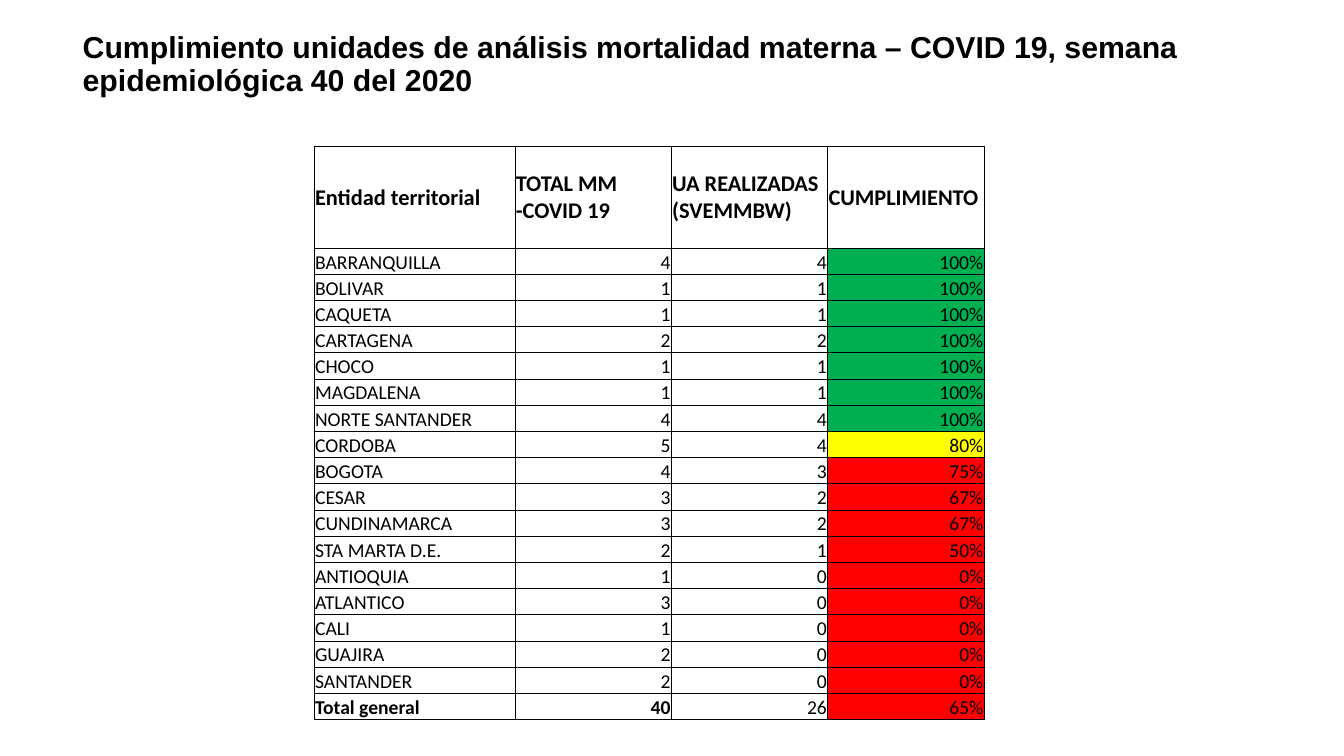
import lxml.etree
import pptx
import pptx.dml.color
import pptx.enum.text
import pptx.oxml.ns
import pptx.util

Cm, Pt = pptx.util.Cm, pptx.util.Pt
RGB = pptx.dml.color.RGBColor
ALIGN = pptx.enum.text.PP_ALIGN
ANCHOR = pptx.enum.text.MSO_ANCHOR

# Content
TITLE = ("Cumplimiento unidades de análisis mortalidad materna – COVID 19, "
         "semana epidemiológica 40 del 2020")
HEADERS = ["Entidad territorial", "TOTAL MM -COVID 19",
           "UA REALIZADAS (SVEMMBW)", "CUMPLIMIENTO"]
ENTITIES = [  # name, maternal deaths, analysis units held
    ("BARRANQUILLA", 4, 4),
    ("BOLIVAR", 1, 1),
    ("CAQUETA", 1, 1),
    ("CARTAGENA", 2, 2),
    ("CHOCO", 1, 1),
    ("MAGDALENA", 1, 1),
    ("NORTE SANTANDER", 4, 4),
    ("CORDOBA", 5, 4),
    ("BOGOTA", 4, 3),
    ("CESAR", 3, 2),
    ("CUNDINAMARCA", 3, 2),
    ("STA MARTA D.E.", 2, 1),
    ("ANTIOQUIA", 1, 0),
    ("ATLANTICO", 3, 0),
    ("CALI", 1, 0),
    ("GUAJIRA", 2, 0),
    ("SANTANDER", 2, 0),
]
TOTAL = ("Total general", sum(e[1] for e in ENTITIES), sum(e[2] for e in ENTITIES))
COLORS = {"text": "000000", "full": "00B050", "partial": "FFFF00", "low": "FF0000"}

# Layout
COL_WIDTHS = [Cm(5.06)] + [Cm(3.94)] * 3
HEADER_HEIGHT, ROW_HEIGHT = Cm(2.57), Cm(0.66)
MARGINS = {"margin_left": Cm(0.02), "margin_right": Cm(0.02),
           "margin_top": Cm(0.02), "margin_bottom": 0}


def format_font(font, **values):
    font.color.rgb = RGB.from_string(COLORS["text"])
    for name, value in values.items():
        setattr(font, name, value)


def add_borders(cell):
    tc_pr = cell._tc.get_or_add_tcPr()
    for side in ("a:lnL", "a:lnR", "a:lnT", "a:lnB"):
        line = lxml.etree.SubElement(tc_pr, pptx.oxml.ns.qn(side), w=str(Pt(0.5)))
        fill = lxml.etree.SubElement(line, pptx.oxml.ns.qn("a:solidFill"))
        lxml.etree.SubElement(fill, pptx.oxml.ns.qn("a:srgbClr"), val=COLORS["text"])


def fill_cell(cell, text, size, bold, anchor, align, color=None):
    add_borders(cell)
    if color:
        cell.fill.solid()
        cell.fill.fore_color.rgb = RGB.from_string(color)
    else:
        cell.fill.background()
    for name, value in MARGINS.items():
        setattr(cell, name, value)
    cell.vertical_anchor = anchor
    p = cell.text_frame.paragraphs[0]
    p.alignment = align
    r = p.add_run()
    r.text = text
    format_font(r.font, name="Calibri", size=Pt(size), bold=bold)


def compliance_color(rate):
    if rate >= 1:
        return COLORS["full"]
    return COLORS["partial"] if rate >= 0.8 else COLORS["low"]


def main():
    prs = pptx.Presentation()
    prs.slide_width, prs.slide_height = Cm(33.87), Cm(19.05)
    s = prs.slides.add_slide(prs.slide_layouts[5])

    # Title
    title = s.shapes.title
    title.left, title.top, title.width, title.height = Cm(1.83), Cm(1.09), Cm(29.95), Cm(1.12)
    tf = title.text_frame
    tf.word_wrap = True
    tf.auto_size = pptx.enum.text.MSO_AUTO_SIZE.NONE
    tf.vertical_anchor = ANCHOR.MIDDLE
    p = tf.paragraphs[0]
    p.alignment, p.line_spacing = ALIGN.LEFT, 0.9
    r = p.add_run()
    r.text = TITLE
    format_font(r.font, name="Arial", size=Pt(21.6), bold=True)

    # Table grid
    rows = ENTITIES + [TOTAL]
    table = s.shapes.add_table(
        len(rows) + 1, len(HEADERS), Cm(7.92), Cm(3.68), sum(COL_WIDTHS),
        HEADER_HEIGHT + ROW_HEIGHT * len(rows)).table
    table.first_row = table.horz_banding = False
    for column, width in zip(table.columns, COL_WIDTHS):
        column.width = width
    for i, row in enumerate(table.rows):
        row.height = ROW_HEIGHT if i else HEADER_HEIGHT

    # Header row
    for j, header in enumerate(HEADERS):
        fill_cell(table.cell(0, j), header, 16, True, ANCHOR.MIDDLE, ALIGN.LEFT)

    # Entity rows and total
    for i, (name, deaths, units) in enumerate(rows, 1):
        rate = units / deaths
        for j, text in enumerate([name, str(deaths), str(units), f"{rate:.0%}"]):
            bold = i == len(rows) and j < 2
            fill_cell(table.cell(i, j), text, 14, bold, ANCHOR.BOTTOM,
                      ALIGN.RIGHT if j else ALIGN.LEFT,
                      compliance_color(rate) if j == 3 else None)

    prs.save("out.pptx")


if __name__ == "__main__":
    main()
